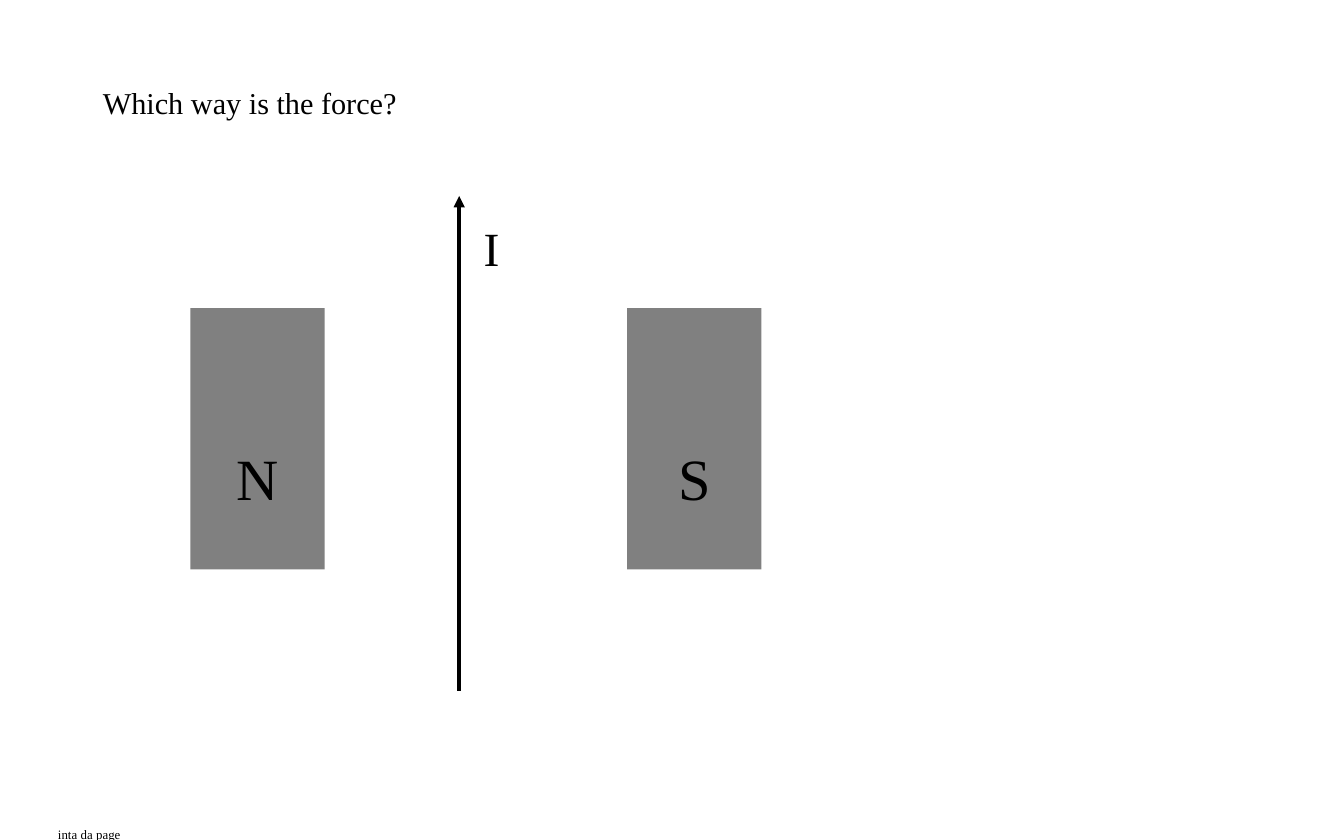
import pptx
import pptx.dml.color
import pptx.enum.shapes
import pptx.enum.text
import pptx.oxml.ns
import pptx.util
from lxml import etree
from dataclasses import dataclass

Pt = pptx.util.Pt


@dataclass
class Theme:
    ink = pptx.dml.color.RGBColor(0, 0, 0)
    magnet = pptx.dml.color.RGBColor(0x80, 0x80, 0x80)
    paper = pptx.dml.color.RGBColor(255, 255, 255)
    font = "Times New Roman"
    question_size = 28
    footer_size = 12
    current_size = 44
    pole_size = 54
    baseline = "-35000"  # all text is set as subscript


theme = Theme()


def write_text(shape, text, size):
    shape.text_frame.word_wrap = False
    paragraph = shape.text_frame.paragraphs[0]
    run = paragraph.add_run()
    run.text = text
    run._r.get_or_add_rPr().set("baseline", theme.baseline)
    paragraph.font.name = theme.font
    paragraph.font.size = Pt(size)
    paragraph.font.color.rgb = theme.ink
    return paragraph


presentation = pptx.Presentation()
presentation.slide_width = Pt(720)
presentation.slide_height = Pt(450)
slide = presentation.slides.add_slide(presentation.slide_layouts[6])
slide.background.fill.solid()
slide.background.fill.fore_color.rgb = theme.paper

# Question, footer and current label
for text, size, left, top, width, height in (
    ("Which way is the force?", theme.question_size, 48, 20, 289.5, 41),
    ("inta da page", theme.footer_size, 24, 430, 72.5, 21.6),
    ("I", theme.current_size, 252, 80, 29.5, 60.5),
):
    label = slide.shapes.add_textbox(Pt(left), Pt(top), Pt(width), Pt(height))
    label.text_frame.auto_size = pptx.enum.text.MSO_AUTO_SIZE.SHAPE_TO_FIT_TEXT
    write_text(label, text, size)

# Magnet poles
for pole, left in (("N", 102), ("S", 336)):
    magnet = slide.shapes.add_shape(
        pptx.enum.shapes.MSO_SHAPE.RECTANGLE, Pt(left), Pt(165), Pt(72), Pt(140)
    )
    magnet.shadow.inherit = False
    magnet.fill.solid()
    magnet.fill.fore_color.rgb = theme.magnet
    magnet.line.fill.background()
    magnet.text_frame.vertical_anchor = pptx.enum.text.MSO_ANCHOR.MIDDLE
    paragraph = write_text(magnet, pole, theme.pole_size)
    paragraph.alignment = pptx.enum.text.PP_ALIGN.CENTER

# Wire with its current arrow
wire = slide.shapes.add_connector(
    pptx.enum.shapes.MSO_CONNECTOR.STRAIGHT, Pt(246), Pt(370), Pt(246), Pt(105)
)
wire.line.color.rgb = theme.ink
wire.line.width = Pt(2)
arrowhead = etree.SubElement(
    wire.line._get_or_add_ln(), pptx.oxml.ns.qn("a:tailEnd")
)
arrowhead.set("type", "triangle")
etree.SubElement(wire._element.spPr, pptx.oxml.ns.qn("a:effectLst"))

presentation.save("out.pptx")
